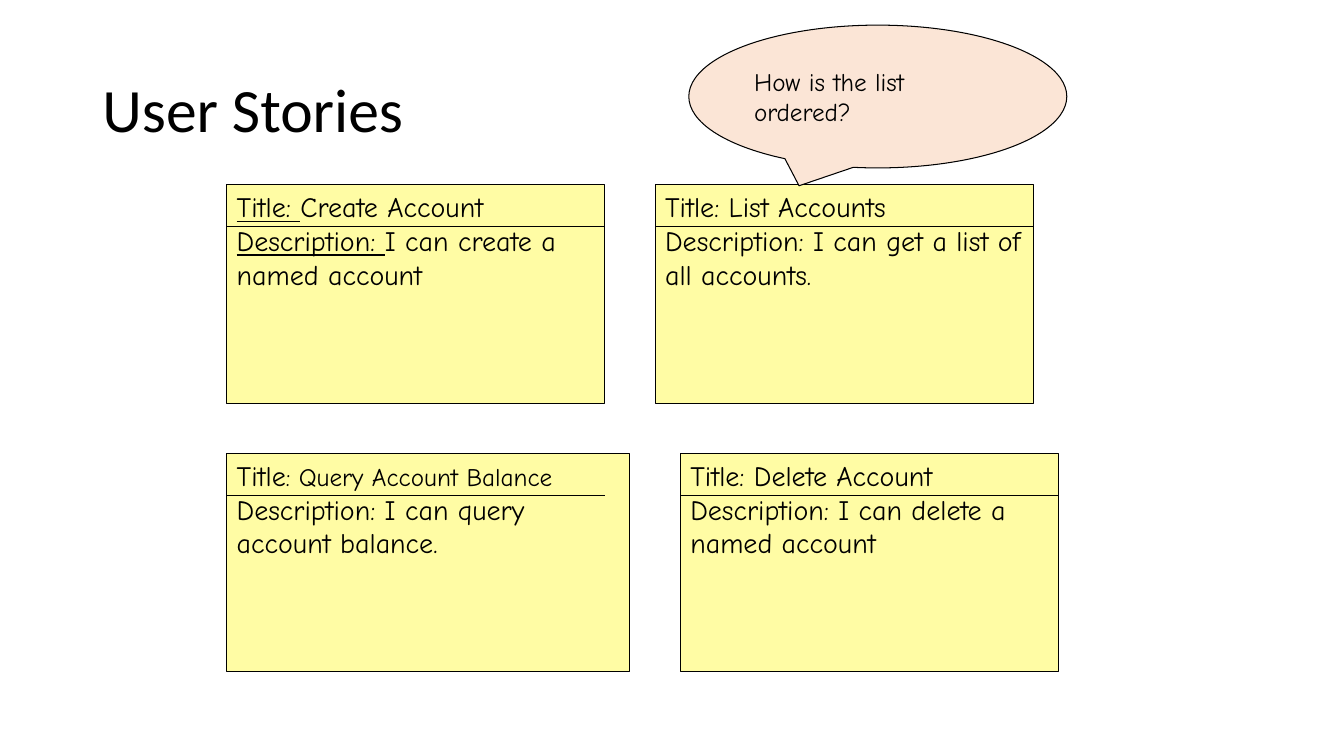
import pptx
import pptx.util
import pptx.dml.color
import pptx.enum.shapes
import pptx.enum.text
import pptx.oxml
import pptx.oxml.ns
from dataclasses import dataclass

# Content
TITLE = "User Stories"
ASK = "How is the list ordered?"
# Card: left, top, width, paragraphs of runs (text, size name, underlined)
CARDS = [
    (216, 176, 360, [
        [("Title: ", "card", True), ("Create Account", "card", False)],
        [("Description: ", "card", True),
         ("I can create a named account", "card", False)]]),
    (624, 176, 360, [
        [("Title: List Accounts", "card", False)],
        [("Description: I can get a list of all accounts.", "card", False)]]),
    (648, 432, 360, [
        [("Title: Delete Account", "card", False)],
        [("Description: I can delete a named account", "card", False)]]),
    (216, 432, 384, [
        [("Title", "card", False), (": Query Account Balance", "note", False)],
        [("Description: I can query account balance.", "card", False)]]),
]

# Lengths in px, 96 to the inch
PX = 9525
PAGE = (1280, 720)
HEAD = (88, 38, 1104, 139)
BUBBLE = (656, 24, 360, 136)
CARD_H, RULE_W, RULE_Y = 208, 360, 40


@dataclass
class Theme:
    ink: str = "000000"
    card_fill: str = "FFFCA4"
    ask_fill: str = "FBE5D6"
    head_font: str = "Calibri"
    hand_font: str = "Comic Neue"
    head: int = 44
    card: int = 20
    note: int = 18
    line: float = 0.75


LOOK = Theme()
KIND = pptx.enum.shapes.MSO_SHAPE
ANCHOR = pptx.enum.text.MSO_ANCHOR
LEFT = pptx.enum.text.PP_ALIGN.LEFT


def emu(*vals):
    return [pptx.util.Emu(v * PX) for v in vals]


def rgb(code):
    return pptx.dml.color.RGBColor.from_string(code)


def add_run(para, text, size, font, under=False):
    run = para.add_run()
    run.text = text
    run.font.size = pptx.util.Pt(size)
    run.font.name = font
    run.font.color.rgb = rgb(LOOK.ink)
    if under:
        run.font.underline = True


def ink_line(item):
    item.line.color.rgb = rgb(LOOK.ink)
    item.line.width = pptx.util.Pt(LOOK.line)


def add_box(shapes, kind, box, fill, anchor, paras):
    shape = shapes.add_shape(kind, *emu(*box))
    shape.shadow.inherit = False
    shape.fill.solid()
    shape.fill.fore_color.rgb = rgb(fill)
    ink_line(shape)
    frame = shape.text_frame
    frame.word_wrap = True
    frame.vertical_anchor = anchor
    for i, runs in enumerate(paras):
        para = frame.add_paragraph() if i else frame.paragraphs[0]
        para.alignment = LEFT
        for text, size, under in runs:
            add_run(para, text, getattr(LOOK, size), LOOK.hand_font, under)


def add_rule(shapes, x, y):
    rule = shapes.add_connector(pptx.enum.shapes.MSO_CONNECTOR.STRAIGHT,
                                *emu(x, y, x + RULE_W, y))
    ink_line(rule)
    props = rule._element.spPr
    props.append(pptx.oxml.parse_xml(
        "<a:effectLst %s/>" % pptx.oxml.ns.nsdecls("a")))


def main():
    deck = pptx.Presentation()
    deck.slide_width, deck.slide_height = emu(*PAGE)
    slide = deck.slides.add_slide(deck.slide_layouts[5])

    # Title
    head = slide.shapes.title
    head.left, head.top, head.width, head.height = emu(*HEAD)
    head.text_frame.vertical_anchor = ANCHOR.MIDDLE
    para = head.text_frame.paragraphs[0]
    para.alignment = LEFT
    para.line_spacing = 0.9
    add_run(para, TITLE, LOOK.head, LOOK.head_font)

    # Story cards, each grouped with its rule
    for x, y, width, paras in CARDS:
        group = slide.shapes.add_group_shape()
        add_box(group.shapes, KIND.RECTANGLE, (x, y, width, CARD_H),
                LOOK.card_fill, ANCHOR.TOP, paras)
        add_rule(group.shapes, x, y + RULE_Y)

    # Question bubble
    add_box(slide.shapes, KIND.OVAL_CALLOUT, BUBBLE, LOOK.ask_fill,
            ANCHOR.MIDDLE, [[(ASK, "note", False)]])

    deck.save("out.pptx")


if __name__ == "__main__":
    main()
